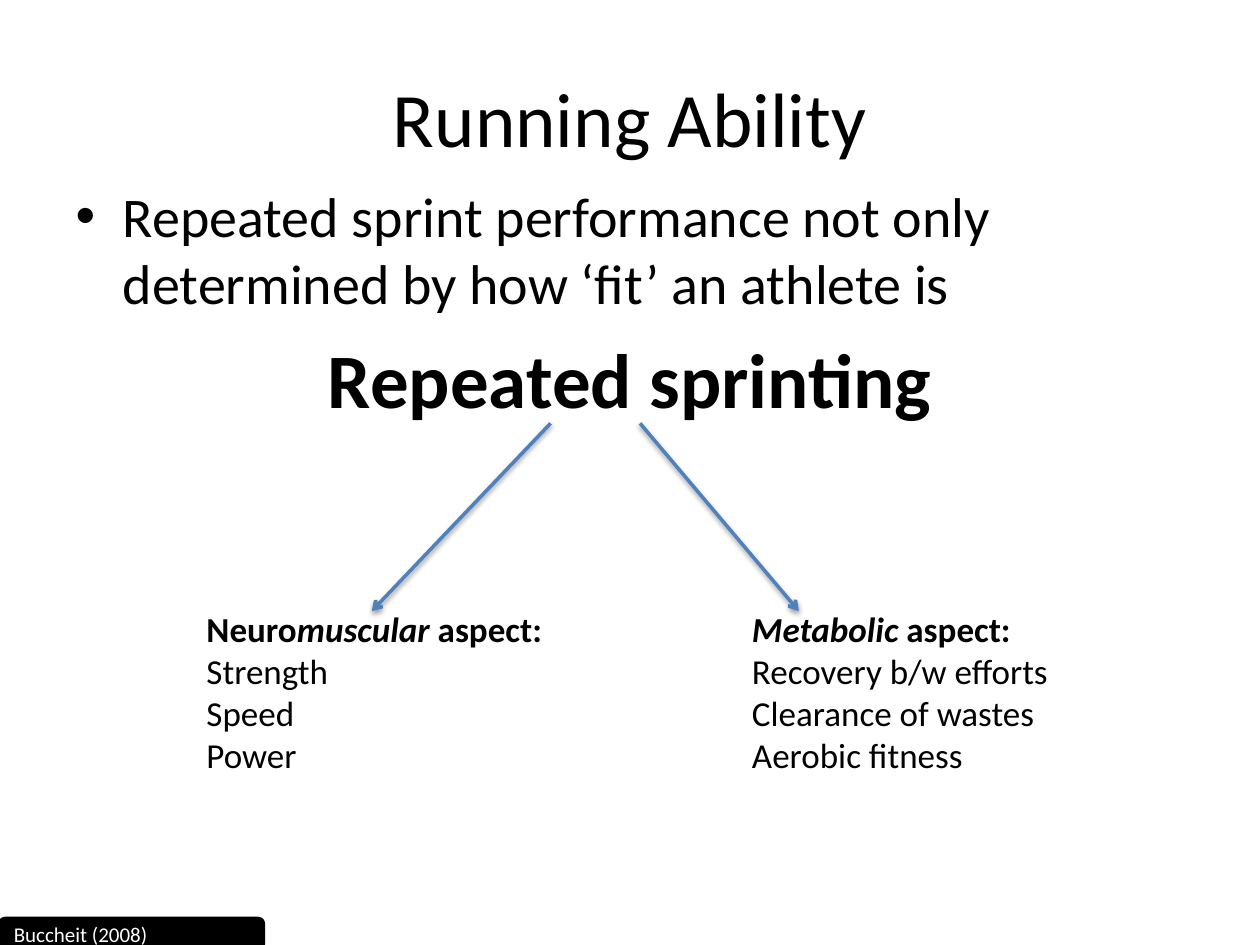
from lxml import etree
from pptx import Presentation
from pptx.dml.color import RGBColor
from pptx.enum import shapes, text
from pptx.oxml import parse_xml
from pptx.oxml.ns import nsdecls, qn
from pptx.util import Inches, Pt

THEME = {
    "font": "Calibri",
    "black": RGBColor(0x00, 0x00, 0x00),
    "white": RGBColor(0xFF, 0xFF, 0xFF),
    "arrow": RGBColor(0x4F, 0x81, 0xBD),
    "title": 44, "body": 32, "aspect": 20, "citation": 12,
    "line": 2,
}

TITLE = "Running Ability"
POINT = "Repeated sprint performance not only determined by how ‘fit’ an athlete is"
KEY_IDEA = "Repeated sprinting"
CITATION = "Buccheit (2008)"

ARROW_TOP, ARROW_BOTTOM = 3.36, 4.85
ASPECT_TOP, ASPECT_HEIGHT = 4.77, 1.45
# Heading parts are (text, italic)
ASPECTS = [
    {"heading": [("Neuro", False), ("muscular", True), (" aspect:", False)],
     "items": ["Strength", "Speed", "Power"],
     "left": 1.54, "width": 3.31, "arrow_x": (4.37, 2.95)},
    {"heading": [("Metabolic", True), (" aspect:", False)],
     "items": ["Recovery b/w efforts", "Clearance of wastes", "Aerobic fitness"],
     "left": 5.87, "width": 3.07, "arrow_x": (5.08, 6.34)},
]

SHADOW = (
    f'<a:effectLst {nsdecls("a")}><a:outerShdw blurRad="39370" dist="20320" '
    'dir="5400000" rotWithShape="0"><a:srgbClr val="000000">'
    '<a:alpha val="38000"/></a:srgbClr></a:outerShdw></a:effectLst>'
)


def box(left, top, width, height):
    return [Inches(v) for v in (left, top, width, height)]


def place(sp, *bounds):
    sp.left, sp.top, sp.width, sp.height = box(*bounds)


def style(p, size, color="black", bold=False):
    for r in p.runs:
        r.font.name = THEME["font"]
        r.font.size = Pt(THEME[size])
        r.font.color.rgb = THEME[color]
        r.font.bold = bold


def add_title_and_body(s):
    title, body = s.shapes.title, s.placeholders[1]
    place(title, 0.5, 0.3, 9, 1.25)
    title.text_frame.text = TITLE
    style(title.text_frame.paragraphs[0], "title")

    place(body, 0.5, 1.39, 9, 4.95)
    tf = body.text_frame
    tf.text = POINT
    p = tf.paragraphs[0]
    p.space_before = Pt(0)
    style(p, "body")
    p = tf.add_paragraph()
    p.text = KEY_IDEA
    p.alignment = text.PP_ALIGN.CENTER
    etree.SubElement(p._p.get_or_add_pPr(), qn("a:buNone"))
    style(p, "title", bold=True)


def add_arrow(s, x_start, x_end):
    line = s.shapes.add_connector(
        shapes.MSO_CONNECTOR.STRAIGHT,
        Inches(x_start), Inches(ARROW_TOP), Inches(x_end), Inches(ARROW_BOTTOM))
    line.line.color.rgb = THEME["arrow"]
    line.line.width = Pt(THEME["line"])
    etree.SubElement(line.line._get_or_add_ln(), qn("a:tailEnd"), type="arrow")
    line._element.spPr.append(parse_xml(SHADOW))


def add_aspect(s, aspect):
    add_arrow(s, *aspect["arrow_x"])
    sp = s.shapes.add_textbox(
        *box(aspect["left"], ASPECT_TOP, aspect["width"], ASPECT_HEIGHT))
    tf = sp.text_frame
    tf.word_wrap = True
    tf.auto_size = text.MSO_AUTO_SIZE.SHAPE_TO_FIT_TEXT
    p = tf.paragraphs[0]
    for words, italic in aspect["heading"]:
        r = p.add_run()
        r.text = words
        r.font.italic = italic
    style(p, "aspect", bold=True)
    for item in aspect["items"]:
        p = tf.add_paragraph()
        p.text = item
        style(p, "aspect")


def add_citation(s):
    sp = s.shapes.add_shape(
        shapes.MSO_SHAPE.ROUNDED_RECTANGLE, *box(0, 7.29, 2.09, 0.24))
    sp.shadow.inherit = False
    sp.fill.solid()
    sp.fill.fore_color.rgb = THEME["black"]
    sp.line.color.rgb = THEME["black"]
    sp.line.width = Pt(THEME["line"])
    tf = sp.text_frame
    tf.text = CITATION
    tf.vertical_anchor = text.MSO_ANCHOR.MIDDLE
    p = tf.paragraphs[0]
    p.alignment = text.PP_ALIGN.LEFT
    style(p, "citation", "white")


def main():
    prs = Presentation()
    prs.slide_width, prs.slide_height = Inches(10), Inches(7.5)
    s = prs.slides.add_slide(prs.slide_layouts[1])
    add_title_and_body(s)
    for aspect in ASPECTS:
        add_aspect(s, aspect)
    add_citation(s)
    prs.save("out.pptx")


if __name__ == "__main__":
    main()
